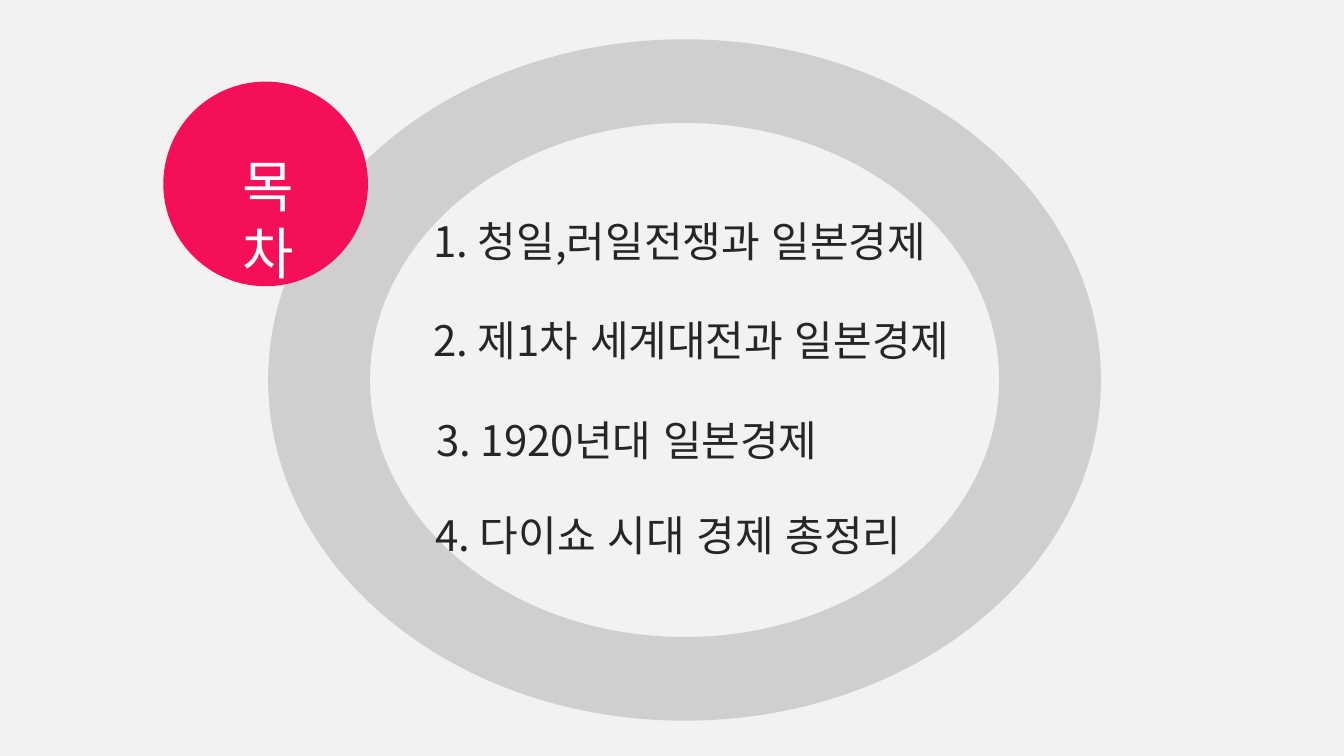
"""Builds the table-of-contents slide with a ring and a title disc."""
from lxml.etree import SubElement
from pptx import Presentation
from pptx.dml.color import RGBColor
from pptx.enum.lang import MSO_LANGUAGE_ID as Language
from pptx.enum.shapes import MSO_SHAPE as Shape
from pptx.enum.text import MSO_AUTO_SIZE as AutoSize, PP_ALIGN as Align
from pptx.oxml.ns import qn
from pptx.util import Inches, Pt

FONT = "Noto Sans CJK KR"
BACKGROUND, RING, DISC, WHITE, INK = "F2F2F2", "D0CECE", "F50F58", "FFFFFF", "262626"
TITLE = ("목차", 2.06, 1.45, 1.21, 0.77)
CHAPTERS = [
    ("1. 청일,러일전쟁과 일본경제", 4.2, 2.09, 5.28, 0.61),
    ("2. 제1차 세계대전과 일본경제", 4.2, 3.07, 5.54, 0.61),
    ("3. 1920년대 일본경제", 4.23, 4.06, 4.48, 0.61),
    ("4. 다이쇼 시대 경제 총정리", 4.22, 5.01, 5.07, 0.61),
]
RING_CENTER = (6.79, 3.77)
INNER_RADII, OUTER_RADII = (3.12, 2.55), (4.13, 3.38)
DISC_BOX = (1.62, 0.81, 2.03, 2.03)
ARC = 0.5523


def paint(fill, color):
    fill.solid()
    fill.fore_color.rgb = RGBColor.from_string(color)


def finish(shape, color):
    shape.shadow.inherit = False
    paint(shape.fill, color)
    shape.line.fill.background()


def quarter_points(radii, side):
    (x, y), (wide, high) = RING_CENTER, radii
    corners = [(x, y - high), (x + side * wide, y), (x, y + high), (x - side * wide, y)]
    return [tuple(map(Inches, corner)) for corner in corners + corners[:1]]


def round_off(ring):
    middle = (ring.width / 2, ring.height / 2)
    start = None
    for step in ring._element.find(".//" + qn("a:path")):
        point = step.find(qn("a:pt"))
        if point is None:
            continue
        end = (int(point.get("x")), int(point.get("y")))
        if step.tag == qn("a:lnTo"):
            corner = [a + b - mid for a, b, mid in zip(start, end, middle)]
            curve = SubElement(step.getparent(), qn("a:cubicBezTo"))
            pulls = [[a + ARC * (c - a) for a, c in zip(tip, corner)] for tip in (start, end)]
            for x, y in pulls + [end]:
                SubElement(curve, qn("a:pt"), x=str(round(x)), y=str(round(y)))
            step.getparent().replace(step, curve)
        start = end


def add_ring(slide):
    inner, outer = quarter_points(INNER_RADII, -1), quarter_points(OUTER_RADII, 1)
    builder = slide.shapes.build_freeform(*inner[0])
    builder.add_line_segments(inner[1:], close=True)
    builder.move_to(*outer[0])
    builder.add_line_segments(outer[1:], close=True)
    ring = builder.convert_to_shape()
    round_off(ring)
    finish(ring, RING)


def add_text(slide, entry, size, color, align):
    words, *box = entry
    frame = slide.shapes.add_textbox(*map(Inches, box)).text_frame
    for name, value in {"word_wrap": True, "auto_size": AutoSize.SHAPE_TO_FIT_TEXT}.items():
        setattr(frame, name, value)
    paragraph = frame.paragraphs[0]
    paragraph.alignment = align
    run = paragraph.add_run()
    run.text = words
    style = {"name": FONT, "size": Pt(size), "language_id": Language.KOREAN}
    for name, value in style.items():
        setattr(run.font, name, value)
    paint(run.font.fill, color)
    properties = run.font._element
    east_asian = SubElement(properties, qn("a:ea"), typeface=FONT)
    properties.find(qn("a:latin")).addnext(east_asian)
    return properties


def add_outline(properties):
    line = SubElement(properties, qn("a:ln"), w=str(Pt(0.75)))
    color = SubElement(SubElement(line, qn("a:solidFill")), qn("a:srgbClr"), val=INK)
    SubElement(color, qn("a:alpha"), val="5000")
    properties.insert(0, line)


def main():
    deck = Presentation()
    deck.slide_width, deck.slide_height = Inches(13.33), Inches(7.5)
    slide = deck.slides.add_slide(deck.slide_layouts[6])
    paint(slide.background.fill, BACKGROUND)
    add_ring(slide)
    finish(slide.shapes.add_shape(Shape.OVAL, *map(Inches, DISC_BOX)), DISC)
    add_text(slide, TITLE, 40, WHITE, Align.CENTER)
    for chapter in CHAPTERS:
        add_outline(add_text(slide, chapter, 30, INK, Align.LEFT))
    deck.save("out.pptx")


if __name__ == "__main__":
    main()
